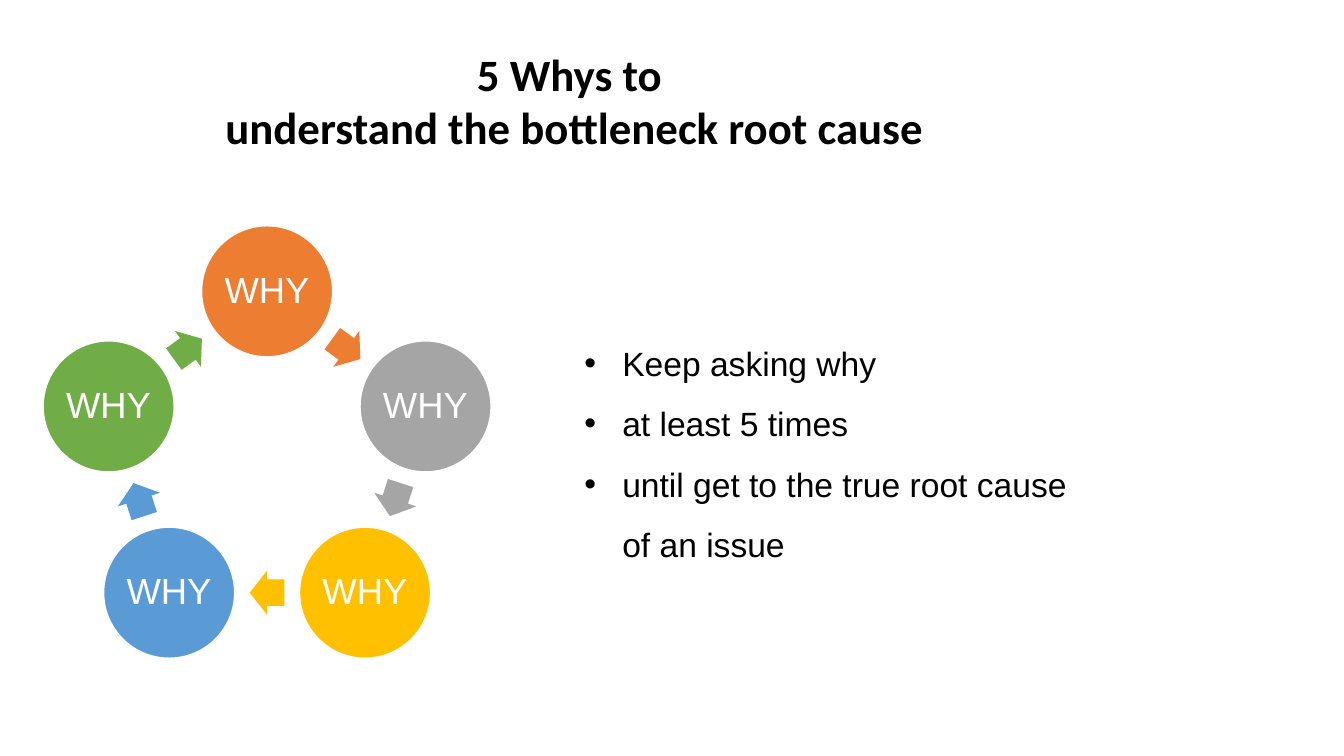
from math import cos, radians, sin

from lxml.etree import SubElement
from pptx import Presentation
from pptx.dml.color import RGBColor
from pptx.enum.shapes import MSO_SHAPE as Shape
from pptx.enum.text import MSO_ANCHOR as Anchor, MSO_AUTO_SIZE as AutoSize, PP_ALIGN as Align
from pptx.oxml.ns import qn
from pptx.util import Pt

RING_COLORS = ["ED7D31", "A5A5A5", "FFC000", "5B9BD5", "70AD47"]
CENTER_X, CENTER_Y, RADIUS = 190.8, 327.1, 119
CIRCLE_SIZE = 93.6
ARROW_WIDTH, ARROW_HEIGHT = 24.8, 31.6
STEP = 360 / len(RING_COLORS)


def color(hex_code):
    return RGBColor.from_string(hex_code)


def style(font, name, size, hex_code, bold=False):
    font.name = name
    font.size = Pt(size)
    font.bold = bold
    font.color.rgb = color(hex_code)


def ring_point(angle, radius):
    turn = radians(angle)
    return CENTER_X + radius * sin(turn), CENTER_Y - radius * cos(turn)


def add_centered(slide, kind, center, width, height, fill):
    x, y = center
    part = slide.shapes.add_shape(
        kind, Pt(x - width / 2), Pt(y - height / 2), Pt(width), Pt(height))
    part.shadow.inherit = False
    part.fill.solid()
    part.fill.fore_color.rgb = color(fill)
    part.line.fill.background()
    return part


def add_why(slide, angle, fill):
    circle = add_centered(slide, Shape.OVAL, ring_point(angle, RADIUS),
                          CIRCLE_SIZE, CIRCLE_SIZE, fill)
    circle.line.color.rgb = color("FFFFFF")
    circle.line.width = Pt(1)
    frame = circle.text_frame
    frame.margin_left = frame.margin_right = Pt(2.9)
    frame.margin_top = frame.margin_bottom = Pt(2.9)
    frame.vertical_anchor = Anchor.MIDDLE
    frame.word_wrap = False
    frame.text = "WHY"
    label = frame.paragraphs[0]
    label.alignment = Align.CENTER
    label.line_spacing = 0.9
    style(label.runs[0].font, "Arial", 26, "FFFFFF")


def add_arrow(slide, angle, fill):
    center = ring_point(angle, RADIUS * cos(radians(STEP / 2)))
    arrow = add_centered(slide, Shape.RIGHT_ARROW, center, ARROW_WIDTH, ARROW_HEIGHT, fill)
    arrow.adjustments[0] = 0.6
    arrow.adjustments[1] = 0.5
    arrow.rotation = angle


def add_text(slide, left, top, width, height, lines):
    box = slide.shapes.add_textbox(Pt(left), Pt(top), Pt(width), Pt(height))
    frame = box.text_frame
    frame.word_wrap = True
    frame.auto_size = AutoSize.SHAPE_TO_FIT_TEXT
    frame.text = "\n".join(lines)
    return frame.paragraphs


def add_title(slide, lines):
    for line in add_text(slide, 109.4, 29.5, 602, 85, lines):
        line.alignment = Align.CENTER
        style(line.runs[0].font, "Calibri", 32, "000000", bold=True)


def add_advice(slide, lines):
    for line in add_text(slide, 410.4, 226.8, 372.2, 177.1, lines):
        line.line_spacing = 1.5
        properties = line._p.get_or_add_pPr()
        properties.set("marL", str(Pt(27)))
        properties.set("indent", str(-Pt(27)))
        SubElement(properties, qn("a:buFont"), typeface="Arial")
        SubElement(properties, qn("a:buChar"), char="•")
        style(line.runs[0].font, "Arial", 24, "000000")


def main():
    deck = Presentation()
    deck.slide_width, deck.slide_height = Pt(960), Pt(540)
    slide = deck.slides.add_slide(deck.slide_layouts[6])
    for index, fill in enumerate(RING_COLORS):
        add_why(slide, index * STEP, fill)
        add_arrow(slide, (index + 0.5) * STEP, fill)
    add_title(slide, ["5 Whys to ", "understand the bottleneck root cause"])
    add_advice(slide, ["Keep asking why", "at least 5 times",
                       "until get to the true root cause of an issue"])
    deck.save("out.pptx")


if __name__ == "__main__":
    main()
